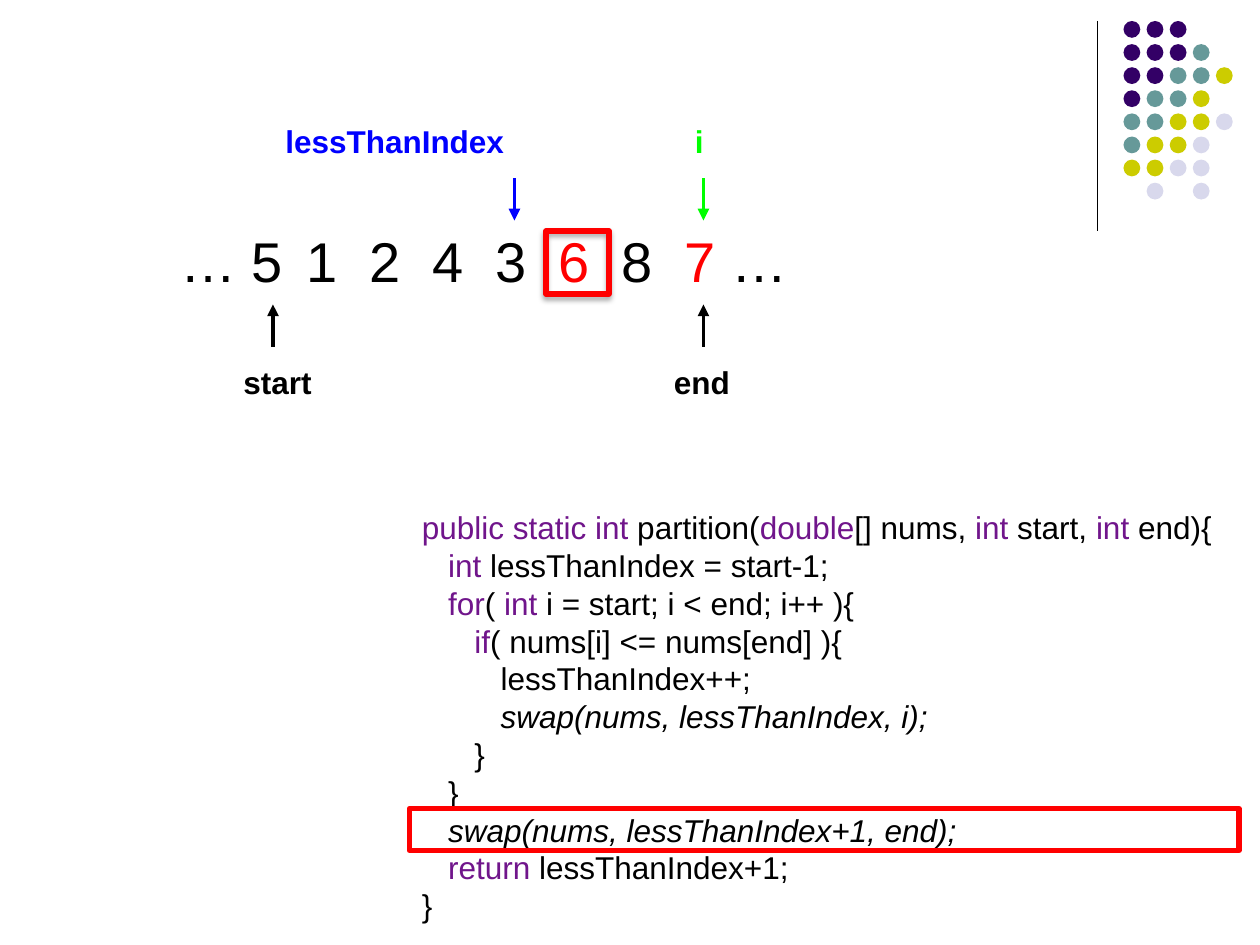
import pptx
import pptx.util
import pptx.dml.color
import pptx.enum.shapes
import pptx.enum.text
import pptx.oxml
import lxml.etree

RGB = pptx.dml.color.RGBColor
BLACK = RGB(0x00, 0x00, 0x00)
RED = RGB(0xFF, 0x00, 0x00)
BLUE = RGB(0x00, 0x00, 0xFF)
GREEN = RGB(0x00, 0xFF, 0x00)
PURPLE = RGB(0x70, 0x15, 0x8B)
DOTS = {"D": RGB(0x33, 0x00, 0x66), "T": RGB(0x66, 0x99, 0x99),
        "Y": RGB(0xCC, 0xCC, 0x00), "L": RGB(0xD8, 0xD8, 0xEC)}
SHAPE = pptx.enum.shapes.MSO_SHAPE
NS = pptx.oxml.ns.qn

deck = pptx.Presentation()
deck.slide_width = pptx.util.Inches(10)
deck.slide_height = pptx.util.Inches(7.5)
slide = deck.slides.add_slide(deck.slide_layouts[6])
shapes = slide.shapes

# Square grid: 120 columns by 90 rows
CELL = deck.slide_width / 120


def grid(*cells):
    return [round(n * CELL) for n in cells]


def add_line(x, top, end, color, width, head=False):
    line = shapes.add_connector(pptx.enum.shapes.MSO_CONNECTOR.STRAIGHT,
                                *grid(x, top, x, end))
    line.line.color.rgb = color
    line.line.width = pptx.util.Pt(width)
    if head:
        tip = lxml.etree.SubElement(line.line._get_or_add_ln(), NS("a:tailEnd"))
        tip.set("type", "triangle")
    lxml.etree.SubElement(line._element.spPr, NS("a:effectLst"))


# Corner rule and dots
add_line(104.5, 2, 22, BLACK, 0.75)
corner = shapes.add_group_shape()
rows = ["DDD", "DDDT", "DDTTY", "DTTY", "TTYYL", "TYYL", "YYLL", " L L"]
for row, codes in enumerate(rows):
    for col, code in enumerate(codes):
        if code == " ":
            continue
        dot = corner.shapes.add_shape(
            SHAPE.OVAL, *grid(107 + 2.2 * col, 2 + 2.2 * row, 1.6, 1.6))
        dot.shadow.inherit = False
        dot.fill.solid()
        dot.fill.fore_color.rgb = DOTS[code]
        dot.line.fill.background()

# Index arrows
for x, top, end, color in [(49, 17, 21, BLUE), (67, 17, 21, GREEN),
                           (26, 33, 29, BLACK), (67, 33, 29, BLACK)]:
    add_line(x, top, end, color, 2.25, True)

# Text: box, size, bold, lines of (level, italic, parts of (text, color))
code = [
    (0, False, "|public static int |partition(|double|[] nums, |int| start, |int| end){"),
    (1, False, "|int |lessThanIndex = start-1;"),
    (1, False, "|for|( |int |i = start; i < end; i++ ){"),
    (2, False, "|if|( nums[i] <= nums[end] ){"),
    (3, False, "lessThanIndex++;"),
    (3, True, "swap(nums, lessThanIndex, i);"),
    (2, False, "}"),
    (1, False, "}"),
    (1, True, "swap(nums, lessThanIndex+1, end);"),
    (1, False, "|return| lessThanIndex+1;"),
    (0, False, "}"),
]
# Bars switch between plain text and keywords
listing = [(level, slant, [(part, PURPLE if n % 2 else BLACK)
                           for n, part in enumerate(text.split("|")) if part])
           for level, slant, text in code]
array = [("… 5\t1\t2\t4\t3\t", BLACK), ("6", RED), ("\t8\t", BLACK),
         ("7 ", RED), ("…", BLACK)]
blocks = [
    ((26, 11, 24, 4.8), 18, True, [(0, False, [("lessThanIndex", BLUE)])]),
    ((65, 11, 5, 4.8), 18, True, [(0, False, [("i", GREEN)])]),
    ((22, 34, 16, 4.8), 18, True, [(0, False, [("start", BLACK)])]),
    ((63, 34, 9, 4.8), 18, True, [(0, False, [("end", BLACK)])]),
    ((16, 21, 62, 7.6), 32, False, [(0, False, array)]),
    ((39, 47.8, 80, 41.2), 18, False, listing),
]
for box, size, bold, lines in blocks:
    frame = shapes.add_textbox(*grid(*box)).text_frame
    frame.word_wrap = True
    frame.auto_size = pptx.enum.text.MSO_AUTO_SIZE.SHAPE_TO_FIT_TEXT
    for n, (level, slant, parts) in enumerate(lines):
        para = frame.add_paragraph() if n else frame.paragraphs[0]
        props = para._p.get_or_add_pPr()
        props.set("marL", str(pptx.util.Pt(15 * level)))
        props.set("indent", "0")
        if parts is array:
            # One tab stop per number
            stops = lxml.etree.SubElement(props, NS("a:tabLst"))
            for num in range(1, 8):
                stop = lxml.etree.SubElement(stops, NS("a:tab"))
                stop.set("pos", str(pptx.util.Pt(40.9 + 35.6 * num)))
                stop.set("algn", "l")
        for text, color in parts:
            run = para.add_run()
            run.text = text
            run.font.name = "Arial"
            run.font.size = pptx.util.Pt(size)
            run.font.bold = bold
            run.font.italic = slant
            run.font.color.rgb = color

# Red frames: current code line, then pivot target
for box in [(39, 77, 79, 4), (52, 22, 6, 6)]:
    mark = shapes.add_shape(SHAPE.RECTANGLE, *grid(*box))
    mark.shadow.inherit = False
    mark.fill.background()
    mark.line.color.rgb = RED
    mark.line.width = pptx.util.Pt(3)

# Soft shadow under the pivot target
glow = mark._element.spPr.find(NS("a:effectLst"))
shade = lxml.etree.SubElement(glow, NS("a:outerShdw"), dir="5400000", rotWithShape="0",
                              blurRad=str(pptx.util.Pt(3.1)), dist=str(pptx.util.Pt(1.8)))
tone = lxml.etree.SubElement(shade, NS("a:srgbClr"), val=str(BLACK))
lxml.etree.SubElement(tone, NS("a:alpha"), val="35000")

deck.save("out.pptx")
